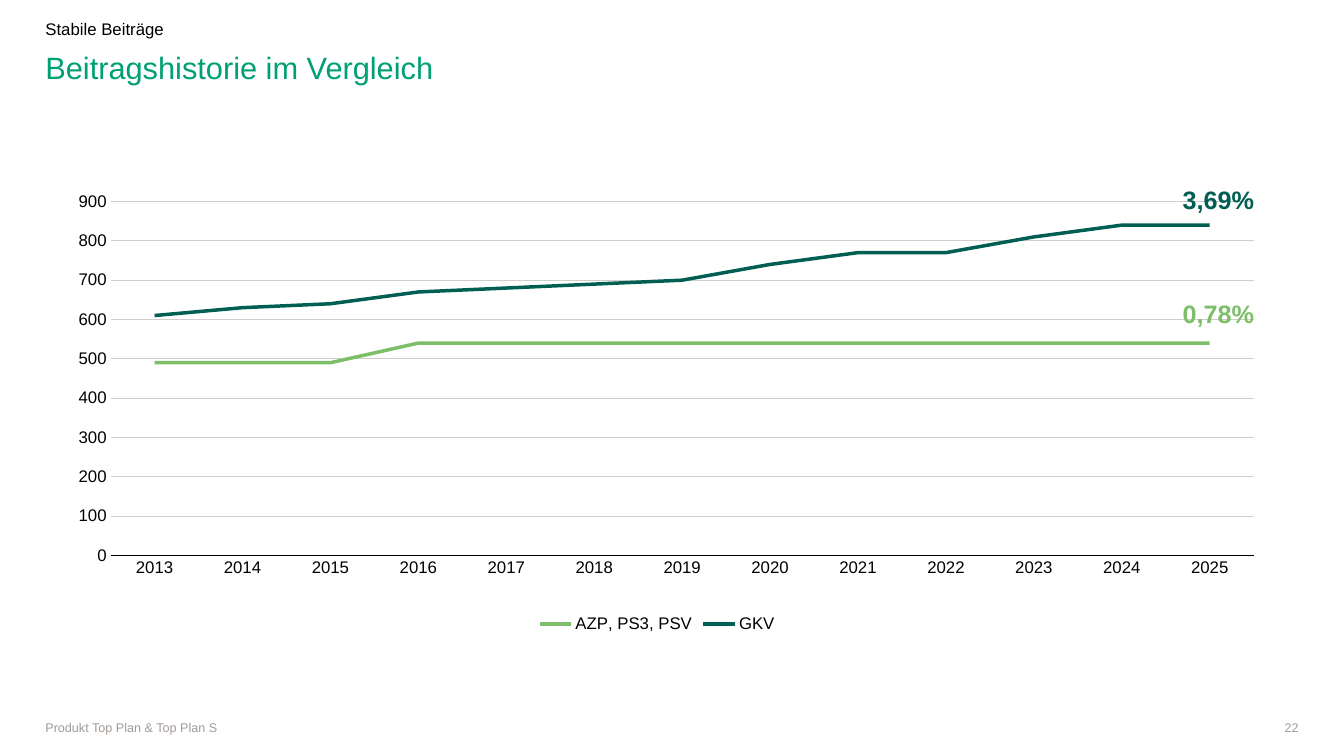
from dataclasses import dataclass

from lxml.etree import SubElement
from pptx import Presentation
from pptx.chart.data import CategoryChartData
from pptx.dml.color import RGBColor
from pptx.enum.chart import XL_CHART_TYPE, XL_LEGEND_POSITION, XL_MARKER_STYLE, XL_TICK_MARK
from pptx.enum.text import MSO_ANCHOR, PP_ALIGN
from pptx.oxml.ns import qn
from pptx.util import Inches, Pt


@dataclass(frozen=True)
class Theme:
    """Hold the colours and type sizes."""
    font: str = "Arial"
    title: str = "00A075"
    ink: str = "000000"
    grey: str = "A49B97"
    grid: str = "D1CDCB"
    light: str = "7DBF68"
    dark: str = "005E52"
    head: int = 22
    mark: int = 18
    body: int = 12
    small: int = 9


THEME = Theme()
YEARS = [str(year) for year in range(2013, 2026)]
RATES = [
    ("AZP, PS3, PSV", THEME.light, [490] * 3 + [540] * 10),
    ("GKV", THEME.dark, [610, 630, 640, 670, 680, 690, 700, 740, 770, 770, 810, 840, 840]),
]


def style(font, size, color):
    """Set the face, size and colour of a font."""
    font.name, font.size = THEME.font, Pt(size)
    font.color.rgb = RGBColor.from_string(color)


def label(slide, box, text, size, color, bold=False, wrap=True,
          align=PP_ALIGN.LEFT, anchor=MSO_ANCHOR.TOP, space=1.0):
    """Place one line of text in a box without margins."""
    frame = slide.shapes.add_textbox(*map(Inches, box)).text_frame
    frame.margin_left = frame.margin_right = frame.margin_top = frame.margin_bottom = 0
    frame.word_wrap, frame.vertical_anchor = wrap, anchor
    para = frame.paragraphs[0]
    para.alignment, para.line_spacing = align, space
    run = para.add_run()
    run.text = text
    run.font.bold = bold
    style(run.font, size, color)


def header(slide, box):
    """Place the topic line and the title below it."""
    left, top, width, height = box
    label(slide, (left, top, 8.19, 0.16), "Stabile Beiträge",
          THEME.body, THEME.ink, space=0.9)
    label(slide, (left, top + 0.31, width, height - 0.31),
          "Beitragshistorie im Vergleich", THEME.head, THEME.title, space=0.9)


def inset(chart, x, y, w, h):
    """Fix the inner plot area as shares of the chart."""
    plot = chart._chartSpace.chart.plotArea
    layout = plot.find(qn("c:layout"))
    if layout is None:
        layout = SubElement(plot, qn("c:layout"))
        plot.insert(0, layout)
    manual = SubElement(layout, qn("c:manualLayout"))
    parts = [("layoutTarget", "inner"), ("xMode", "edge"), ("yMode", "edge"),
             ("x", x), ("y", y), ("w", w), ("h", h)]
    for name, value in parts:
        SubElement(manual, qn(f"c:{name}")).set("val", str(value))


def axes(chart):
    """Style both axes and the grid."""
    for axis in (chart.category_axis, chart.value_axis):
        axis.major_tick_mark = axis.minor_tick_mark = XL_TICK_MARK.NONE
        style(axis.tick_labels.font, THEME.body, THEME.ink)
    base = chart.category_axis.format.line
    base.width = Pt(0.75)
    base.color.rgb = RGBColor.from_string(THEME.ink)
    scale = chart.value_axis
    scale.minimum_scale, scale.maximum_scale, scale.major_unit = 0, 900, 100
    scale.format.line.fill.background()
    grid = scale.major_gridlines.format.line
    grid.width = Pt(0.5)
    grid.color.rgb = RGBColor.from_string(THEME.grid)


def history(slide, box):
    """Draw the line chart with its growth rates at the right."""
    data = CategoryChartData(number_format="0")
    data.categories = YEARS
    for name, _, values in RATES:
        data.add_series(name, values)
    chart = slide.shapes.add_chart(XL_CHART_TYPE.LINE, *map(Inches, box), data).chart
    style(chart.font, THEME.body, THEME.ink)
    chart.has_title = False
    chart.has_legend = True
    chart.legend.position = XL_LEGEND_POSITION.BOTTOM
    chart.legend.include_in_layout = False
    style(chart.legend.font, THEME.body, THEME.ink)
    chart.plots[0].vary_by_categories = False
    for series, (_, color, _) in zip(chart.plots[0].series, RATES):
        series.smooth = False
        series.marker.style = XL_MARKER_STYLE.NONE
        series.format.line.width = Pt(2.5)
        series.format.line.color.rgb = RGBColor.from_string(color)
    axes(chart)
    inset(chart, 0.042, 0.04, 0.958, 0.78)
    left, top, width, _ = box
    for text, drop, color in (("3,69%", 0.01, THEME.dark), ("0,78%", 1.14, THEME.light)):
        label(slide, (left + width - 0.71, top + drop, 0.72, 0.3), text,
              THEME.mark, color, bold=True, wrap=False)


def footer(slide, box):
    """Place the product line and the page number."""
    left, top, width, height = box
    label(slide, (left, top, 5.12, height), "Produkt Top Plan & Top Plan S",
          THEME.small, THEME.grey, anchor=MSO_ANCHOR.BOTTOM)
    label(slide, (left + width - 0.51, top, 0.51, height), "22",
          THEME.small, THEME.grey, align=PP_ALIGN.RIGHT, anchor=MSO_ANCHOR.BOTTOM)


def main():
    """Build the slide and save it."""
    deck = Presentation()
    deck.slide_width, deck.slide_height = Inches(13.33), Inches(7.5)
    slide = deck.slides.add_slide(deck.slide_layouts[6])
    header(slide, (0.45, 0.21, 12.44, 1.09))
    history(slide, (0.6, 1.82, 11.84, 4.5))
    footer(slide, (0.45, 7.16, 12.43, 0.13))
    deck.save("out.pptx")


if __name__ == "__main__":
    main()
